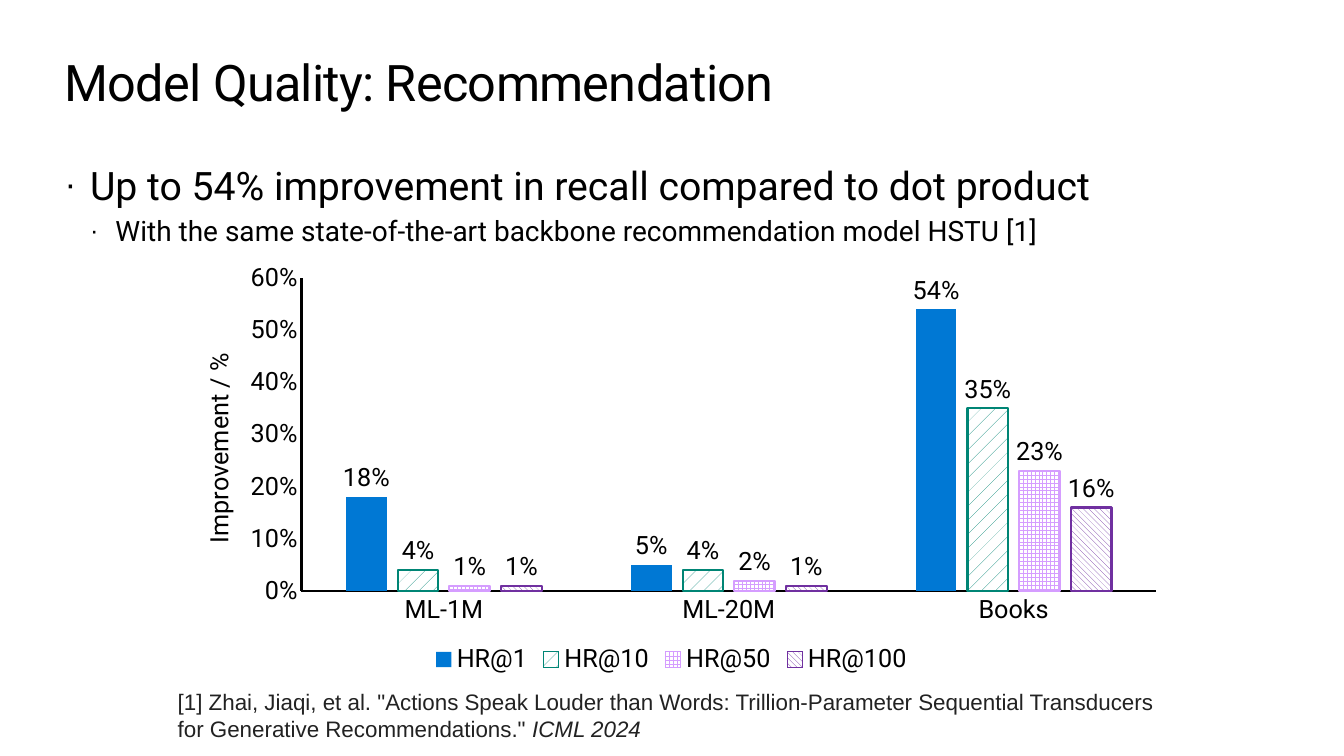
"""Build the slide on recommendation model quality with a clustered column chart."""
from lxml import etree
from pptx import Presentation
from pptx import util as u
from pptx.chart.data import CategoryChartData
from pptx.dml.color import RGBColor
from pptx.enum import chart as charts, dml, text
from pptx.oxml import ns

TITLE = "Model Quality: Recommendation"
BULLETS = [
    (0, 28, "Up to 54% improvement in recall compared to dot product"),
    (1, 20, "With the same state-of-the-art backbone recommendation model HSTU [1]"),
]
CITATION = [
    [('[1] Zhai, Jiaqi, et al. "Actions Speak Louder than Words: '
      'Trillion-Parameter Sequential Transducers', False)],
    [('for Generative Recommendations." ', False), ("ICML 2024", True)],
]
DATASETS = ["ML-1M", "ML-20M", "Books"]
PATTERN = dml.MSO_PATTERN
SERIES = [
    ("HR@1", (0.18, 0.05, 0.54), "0078D4", None),
    ("HR@10", (0.04, 0.04, 0.35), "008575", PATTERN.PERCENT_5),
    ("HR@50", (0.01, 0.02, 0.23), "D59DFF", PATTERN.LARGE_GRID),
    ("HR@100", (0.01, 0.01, 0.16), "7030A0", PATTERN.WIDE_DOWNWARD_DIAGONAL),
]
AXIS_TITLE = "Improvement / %"
BLACK, WHITE, GREY = "000000", "FFFFFF", "222222"
MARGIN, CONTENT_WIDTH = 1.63, 30.61
INDENT = u.Cm(0.64)


def color(value):
    return RGBColor.from_string(value)


def style(font, size, name="Roboto", fill=BLACK):
    font.size = u.Pt(size)
    font.name = name
    font.bold = False
    font.color.rgb = color(fill)


def place(box, left, top, width, height):
    box.left, box.top, box.width, box.height = map(u.Cm, (left, top, width, height))
    frame = box.text_frame
    frame.margin_left = frame.margin_right = frame.margin_top = frame.margin_bottom = 0
    frame.word_wrap = True
    frame.auto_size = text.MSO_AUTO_SIZE.NONE
    frame.vertical_anchor = text.MSO_ANCHOR.TOP
    return frame


def paragraph(frame, index):
    para = frame.paragraphs[0] if index == 0 else frame.add_paragraph()
    para.alignment = text.PP_ALIGN.LEFT
    para.space_before = u.Pt(0)
    return para


def add_span(para, words, size, **look):
    span = para.add_run()
    span.text = words
    style(span.font, size, **look)
    return span


def add_bullet(para):
    props = para._p.get_or_add_pPr()
    props.set("marL", str(INDENT * (para.level + 1)))
    props.set("indent", str(-INDENT))
    for tag, key, value in (("a:buSzPct", "val", "90000"), ("a:buChar", "char", "·")):
        etree.SubElement(props, ns.qn(tag)).set(key, value)


def set_layout(parent, index, **values):
    for old in parent.findall(ns.qn("c:layout")):
        parent.remove(old)
    layout = etree.Element(ns.qn("c:layout"))
    manual = etree.SubElement(layout, ns.qn("c:manualLayout"))
    for tag, value in values.items():
        etree.SubElement(manual, ns.qn("c:" + tag)).set("val", str(value))
    parent.insert(index, layout)


def add_recall_chart(page):
    data = CategoryChartData(number_format="0%")
    data.categories = DATASETS
    for name, values, _, _ in SERIES:
        data.add_series(name, values)
    chart = page.shapes.add_chart(
        charts.XL_CHART_TYPE.COLUMN_CLUSTERED,
        u.Cm(4.22), u.Cm(6.43), u.Cm(25.4), u.Cm(10.69), data).chart
    style(chart.font, 18)
    chart.has_title = False
    chart.has_legend = True
    chart.legend.position = charts.XL_LEGEND_POSITION.BOTTOM
    chart.legend.include_in_layout = False
    style(chart.legend.font, 18)

    for axis in (chart.category_axis, chart.value_axis):
        axis.has_major_gridlines = False
        axis.major_tick_mark = axis.minor_tick_mark = charts.XL_TICK_MARK.NONE
        axis.format.line.color.rgb = color(BLACK)
        axis.format.line.width = u.Pt(1.5)
        style(axis.tick_labels.font, 18)
    scale = chart.value_axis
    scale.minimum_scale, scale.maximum_scale, scale.major_unit = 0, 0.6, 0.1
    scale.tick_labels.number_format = "0%"
    scale.tick_labels.number_format_is_linked = False
    frame = scale.axis_title.text_frame
    add_span(frame.paragraphs[0], AXIS_TITLE, 18)
    frame._txBody.bodyPr.set("rot", "-5400000")
    frame._txBody.bodyPr.set("vert", "horz")
    set_layout(scale.axis_title._element, 1, xMode="edge", yMode="edge", x=0.03, y=0.22)

    plot = chart.plots[0]
    plot.vary_by_categories = False
    plot.gap_width, plot.overlap = 219, -27
    set_layout(plot._element.getparent(), 0, layoutTarget="inner", xMode="edge",
               yMode="edge", x=0.133, y=0.054, w=0.848, h=0.738)
    for series, (_, _, tint, pattern) in zip(plot.series, SERIES):
        series.invert_if_negative = False
        fill, line = series.format.fill, series.format.line
        if pattern is None:
            fill.solid()
            fill.fore_color.rgb = color(tint)
            line.fill.background()
        else:
            fill.patterned()
            fill.pattern = pattern
            fill.fore_color.rgb = color(tint)
            fill.back_color.rgb = color(WHITE)
            line.color.rgb = color(tint)
            line.width = u.Pt(1.5)
        labels = series.data_labels
        labels.show_value = True
        labels.position = charts.XL_LABEL_POSITION.OUTSIDE_END
        labels.number_format = "0%"
        labels.number_format_is_linked = False
        style(labels.font, 18)


def main():
    deck = Presentation()
    deck.slide_width, deck.slide_height = u.Cm(33.87), u.Cm(19.05)
    page = deck.slides.add_slide(deck.slide_layouts[1])

    frame = place(page.shapes.title, MARGIN, 1.3, CONTENT_WIDTH, 1.55)
    heading = add_span(paragraph(frame, 0), TITLE, 36)
    heading.font._element.set("spc", "-50")

    frame = place(page.placeholders[1], MARGIN, 4.06, CONTENT_WIDTH, 2.24)
    for index, (level, size, words) in enumerate(BULLETS):
        para = paragraph(frame, index)
        para.level = level
        if index:
            para.space_before = u.Pt(size * 0.2)
        add_bullet(para)
        add_span(para, words, size)

    add_recall_chart(page)

    frame = place(page.shapes.add_textbox(0, 0, 0, 0), 4.48, 17.35, 24.9, 1.37)
    for index, spans in enumerate(CITATION):
        para = paragraph(frame, index)
        for words, italic in spans:
            add_span(para, words, 16, name="Arial", fill=GREY).font.italic = italic

    deck.save("out.pptx")


if __name__ == "__main__":
    main()
